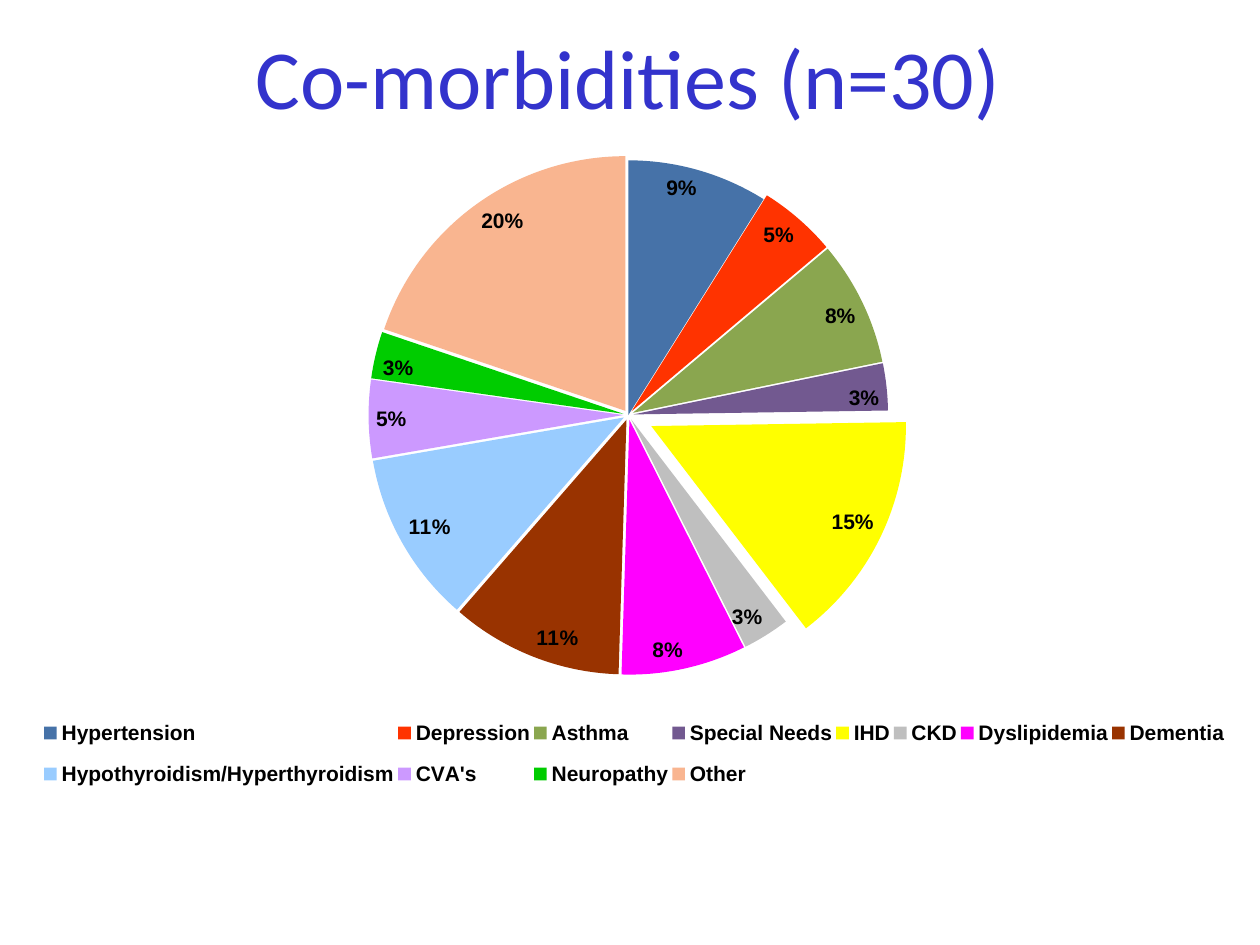
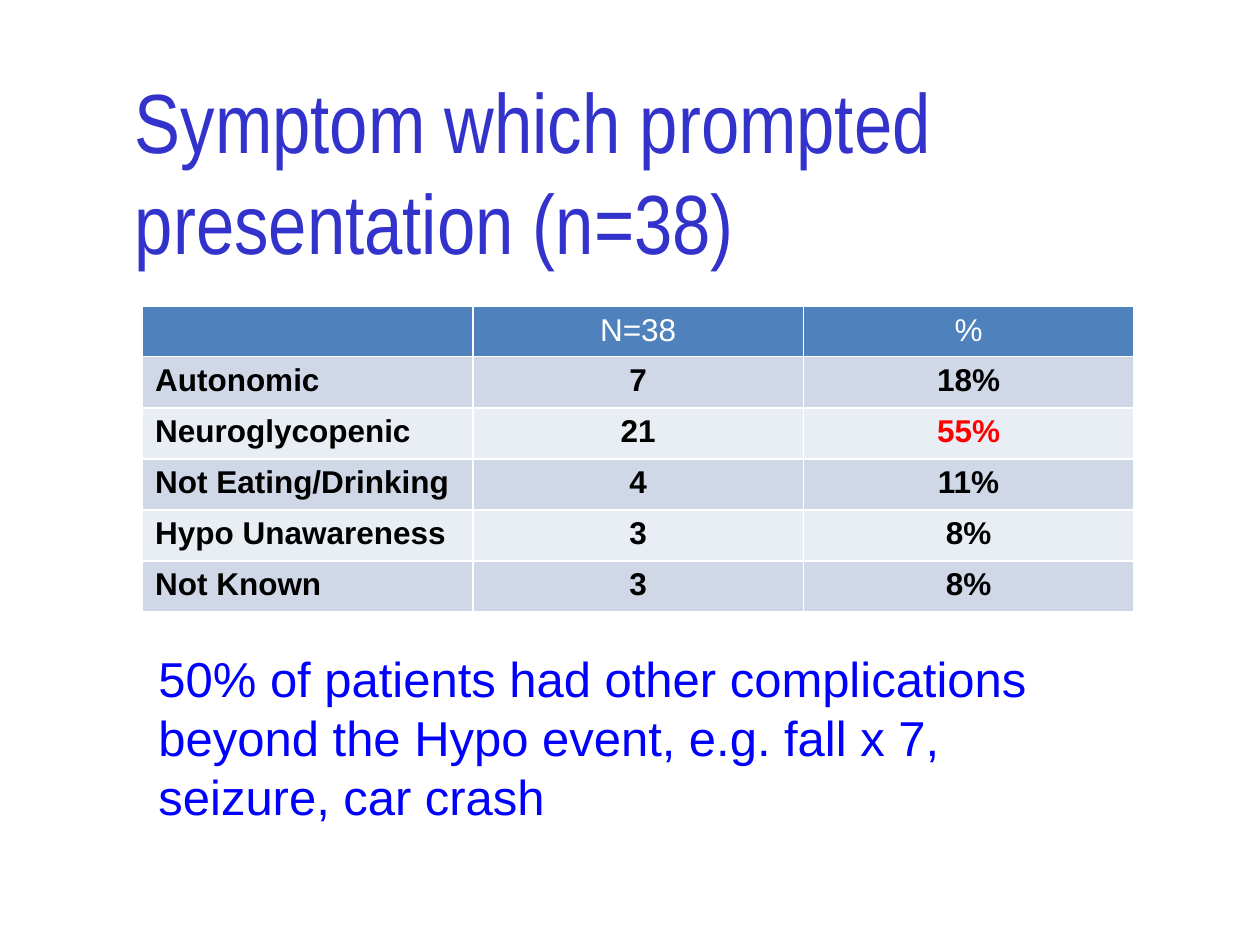
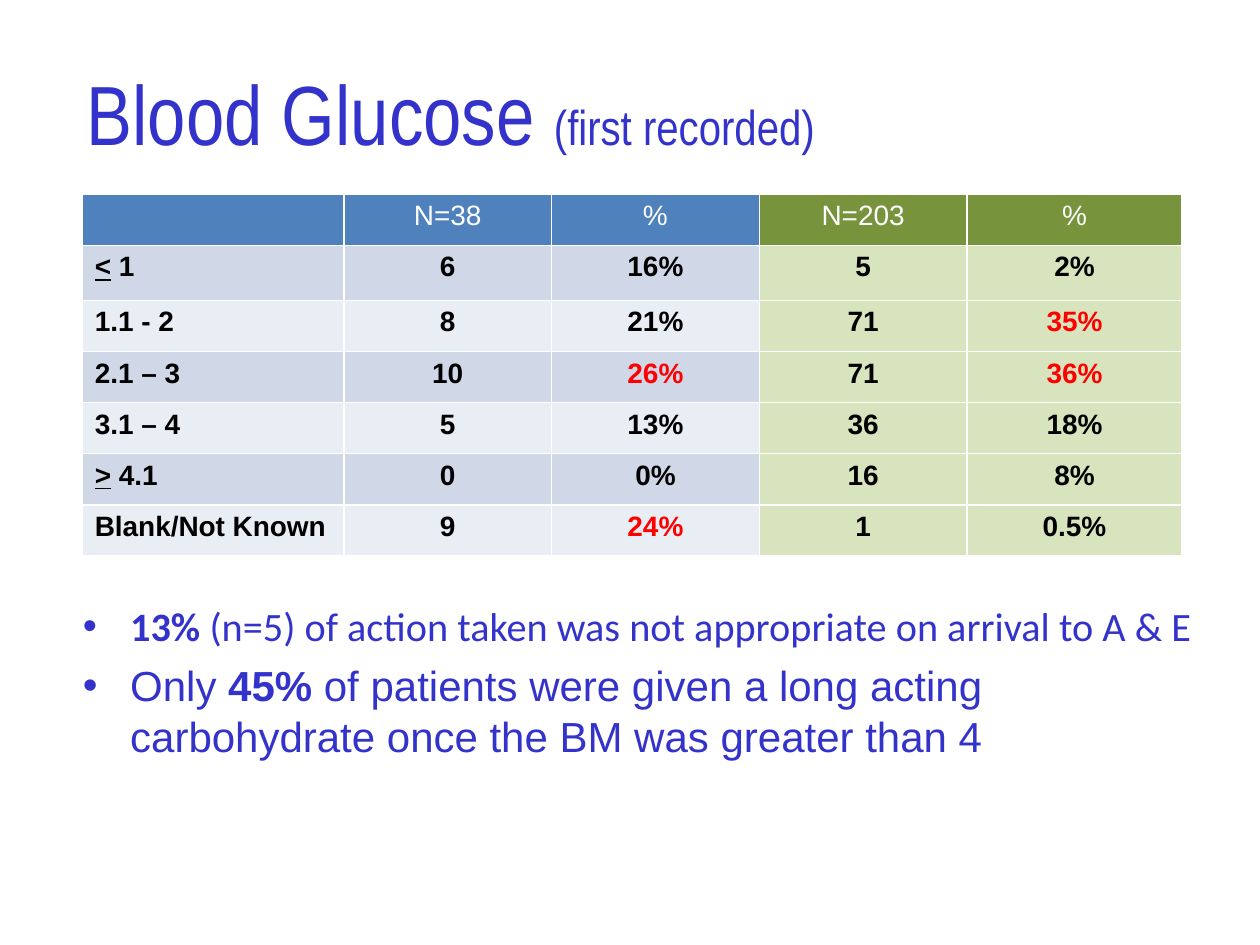
"""Build three slides on co-morbidities, symptoms and blood glucose."""
from dataclasses import dataclass

from pptx import Presentation
from pptx import util as u
from pptx.chart.data import CategoryChartData
from pptx.dml.color import RGBColor
from pptx.enum import chart as charts, text
from pptx.oxml import parse_xml
from pptx.oxml.ns import nsdecls


@dataclass(frozen=True)
class Theme:
    title: str = "3333CC"
    note: str = "0000FF"
    ink: str = "000000"
    white: str = "FFFFFF"
    alert: str = "FF0000"
    blue: str = "4F81BD"
    blue_bands: tuple = ("D0D8E8", "E9EDF4")
    green: str = "77933C"
    green_bands: tuple = ("D7E4BD", "D7E4BD")
    sans: str = "Arial"
    narrow: str = "Arial Narrow"
    soft: str = "Calibri"
    title_size: int = 48
    note_size: int = 28
    label_size: int = 12


THEME = Theme()


@dataclass(frozen=True)
class Area:
    left: float
    top: float
    width: float
    height: float

    def lengths(self) -> list:
        return [u.Pt(side) for side in (self.left, self.top, self.width, self.height)]


@dataclass(frozen=True)
class Span:
    words: str
    size: float
    font: str = THEME.sans
    color: str = THEME.title
    bold: bool = False
    underline: bool = False


@dataclass(frozen=True)
class Slice:
    name: str
    percent: int
    color: str
    explosion: int = 2


@dataclass(frozen=True)
class Grid:
    area: Area
    widths: list
    heights: list
    size: int
    rows: list
    alerts: set
    green_from: int = 99


SLICES = [
    Slice("Hypertension", 9, "4672A8", 0),
    Slice("Depression", 5, "FF3300"),
    Slice("Asthma", 8, "8AA64F"),
    Slice("Special Needs", 3, "725990"),
    Slice("IHD", 15, "FFFF00", 10),
    Slice("CKD", 3, "BFBFBF"),
    Slice("Dyslipidemia", 8, "FF00FF"),
    Slice("Dementia", 11, "993300"),
    Slice("Hypothyroidism/Hyperthyroidism", 11, "99CCFF"),
    Slice("CVA's", 5, "CC99FF"),
    Slice("Neuropathy", 3, "00CC00"),
    Slice("Other", 20, "F9B590"),
]

SYMPTOMS = Grid(
    Area(81.5, 175, 566.4, 175), [188.8] * 3, [28.8] + [29.2] * 5, 18,
    [
        ["", "N=38", "%"],
        ["Autonomic", "7", "18%"],
        ["Neuroglycopenic", "21", "55%"],
        ["Not Eating/Drinking", "4", "11%"],
        ["Hypo Unawareness", "3", "8%"],
        ["Not Known", "3", "8%"],
    ],
    {(2, 2)},
)

GLUCOSE = Grid(
    Area(47, 111, 628.5, 206.5), [149.5, 118.7, 118.7, 118.7, 122.9],
    [29.2, 31.5] + [29.2] * 5, 16,
    [
        ["", "N=38", "%", "N=203", "%"],
        ["< 1", "6", "16%", "5", "2%"],
        ["1.1 - 2", "8", "21%", "71", "35%"],
        ["2.1 – 3", "10", "26%", "71", "36%"],
        ["3.1 – 4", "5", "13%", "36", "18%"],
        ["> 4.1", "0", "0%", "16", "8%"],
        ["Blank/Not Known", "9", "24%", "1", "0.5%"],
    ],
    {(2, 4), (3, 2), (3, 4), (6, 2)},
    green_from=3,
)


def style_font(font, size: float, name: str, color: str, bold: bool = False) -> None:
    """Set the face, size, colour and weight of a font."""
    font.size, font.name, font.bold = u.Pt(size), name, bold
    font.color.rgb = RGBColor.from_string(color)


def write_spans(para, spans: list) -> None:
    """Fill a paragraph with formatted runs."""
    for span in spans:
        run = para.add_run()
        run.text = span.words
        style_font(run.font, span.size, span.font, span.color, span.bold)
        if span.underline:
            run.font.underline = True


def add_text(page, area: Area, paragraphs: list, anchor=text.MSO_ANCHOR.TOP):
    """Add a wrapping text box, one list of spans to a paragraph."""
    frame = page.shapes.add_textbox(*area.lengths()).text_frame
    frame.word_wrap = True
    frame.vertical_anchor = anchor
    for number, spans in enumerate(paragraphs):
        write_spans(frame.add_paragraph() if number else frame.paragraphs[0], spans)
    return frame


def add_title(page, area: Area, words: str, font: str = THEME.narrow,
              suffix: str = "", anchor=text.MSO_ANCHOR.BOTTOM):
    """Add a slide title with an optional smaller suffix."""
    spans = [Span(words, THEME.title_size, font)]
    if suffix:
        spans.append(Span(suffix, THEME.note_size, font))
    return add_text(page, area, [spans], anchor)


def add_bullets(para) -> None:
    """Give a paragraph a hanging round bullet."""
    para.space_after = u.Pt(6)
    props = para._p.get_or_add_pPr()
    props.set("marL", str(u.Pt(27)))
    props.set("indent", str(-u.Pt(27)))
    for tag in ('buFont {} typeface="Arial"', 'buChar {} char="•"'):
        props.append(parse_xml(f"<a:{tag.format(nsdecls('a'))}/>"))


def add_borders(cell) -> None:
    """Draw thin white lines around a cell."""
    props = cell._tc.get_or_add_tcPr()
    for position, side in enumerate("LRTB"):
        props.insert(position, parse_xml(
            f'<a:ln{side} {nsdecls("a")} w="{u.Pt(1)}"><a:solidFill>'
            f'<a:srgbClr val="{THEME.white}"/></a:solidFill></a:ln{side}>'))


def cell_spans(grid: Grid, row: int, column: int) -> list:
    """Return the spans of a cell, underlining a leading comparison sign."""
    words = grid.rows[row][column]
    if row == 0:
        return [Span(words, grid.size, color=THEME.white)] if words else []
    color = THEME.alert if (row, column) in grid.alerts else THEME.ink
    if words[0] in "<>":
        return [Span(words[0], grid.size, color=color, bold=True, underline=True),
                Span(words[1:], grid.size, color=color, bold=True)]
    return [Span(words, grid.size, color=color, bold=True)]


def add_grid(page, grid: Grid) -> None:
    """Add a table with a coloured header and banded rows."""
    table = page.shapes.add_table(
        len(grid.rows), len(grid.widths), *grid.area.lengths()).table
    for column, width in zip(table.columns, grid.widths):
        column.width = u.Pt(width)
    for number, height in enumerate(grid.heights):
        table.rows[number].height = u.Pt(height)
        for column in range(len(grid.widths)):
            cell = table.cell(number, column)
            green = column >= grid.green_from
            header = THEME.green if green else THEME.blue
            bands = THEME.green_bands if green else THEME.blue_bands
            cell.fill.solid()
            cell.fill.fore_color.rgb = RGBColor.from_string(
                bands[(number - 1) % 2] if number else header)
            add_borders(cell)
            para = cell.text_frame.paragraphs[0]
            if column:
                para.alignment = text.PP_ALIGN.CENTER
            write_spans(para, cell_spans(grid, number, column))


def place_part(part, index: int, inner: bool, box: tuple) -> None:
    """Give a chart part a manual layout in fractions of the chart."""
    for layout in part.xpath("./c:layout"):
        part.remove(layout)
    target = '<c:layoutTarget val="inner"/>' if inner else ""
    modes = '<c:xMode val="edge"/><c:yMode val="edge"/>'
    sides = "".join(f'<c:{side} val="{value}"/>' for side, value in zip("xywh", box))
    part.insert(index, parse_xml(
        f'<c:layout {nsdecls("c")}><c:manualLayout>{target}{modes}{sides}'
        "</c:manualLayout></c:layout>"))


def add_pie(page, area: Area, slices: list) -> None:
    """Add a pie chart with pulled-out slices and a legend below."""
    data = CategoryChartData()
    data.categories = [piece.name for piece in slices]
    data.add_series("Series 1", [piece.percent for piece in slices])
    chart = page.shapes.add_chart(
        charts.XL_CHART_TYPE.PIE, *area.lengths(), data).chart
    style_font(chart.font, 10, THEME.soft, THEME.ink)
    chart.has_title = False
    chart.has_legend = True
    chart.legend.position = charts.XL_LEGEND_POSITION.BOTTOM
    chart.legend.include_in_layout = False
    style_font(chart.legend.font, THEME.label_size, THEME.sans, THEME.ink, True)

    plot = chart.plots[0]
    plot.vary_by_categories = True
    plot.has_data_labels = True
    labels = plot.data_labels
    labels.show_percentage, labels.show_value = True, False
    labels.number_format, labels.number_format_is_linked = "0%", False
    labels.position = charts.XL_LABEL_POSITION.INSIDE_END
    style_font(labels.font, THEME.label_size, THEME.sans, THEME.ink, True)

    for number, piece in enumerate(slices):
        fill = plot.series[0].points[number].format.fill
        fill.solid()
        fill.fore_color.rgb = RGBColor.from_string(piece.color)
    for point, piece in zip(chart.element.xpath("//c:dPt"), slices):
        point.xpath("./c:spPr")[0].addprevious(parse_xml(
            f'<c:explosion {nsdecls("c")} val="{piece.explosion}"/>'))
    place_part(chart.element.xpath("//c:plotArea")[0], 0, True, (0.27, 0.02, 0.45, 0.76))
    place_part(chart.element.xpath("//c:legend")[0], 1, False, (0, 0.83, 1, 0.15))


def build_comorbidities(page) -> None:
    """Build the co-morbidity pie slide."""
    frame = add_title(page, Area(70, -1.5, 578, 90), "Co-morbidities (n=30)",
                      THEME.soft, anchor=text.MSO_ANCHOR.MIDDLE)
    frame.paragraphs[0].alignment = text.PP_ALIGN.CENTER
    add_pie(page, Area(23, 84, 679, 383), SLICES)


def build_symptoms(page) -> None:
    """Build the presenting symptom slide."""
    add_title(page, Area(70, 68.5, 578, 90), "Symptom which prompted presentation (n=38)")
    add_grid(page, SYMPTOMS)
    note = ("50% of patients had other complications beyond the Hypo event, "
            "e.g. fall x 7, seizure, car crash")
    add_text(page, Area(83.5, 367, 564.5, 109),
             [[Span(note, THEME.note_size, color=THEME.note)]])


def build_glucose(page) -> None:
    """Build the blood glucose slide."""
    add_title(page, Area(42.5, 29, 578, 67.5), "Blood Glucose ", suffix="(first recorded)")
    add_grid(page, GLUCOSE)
    frame = add_text(page, Area(40.3, 340, 654, 161), [
        [Span("13% ", 23, THEME.soft, bold=True),
         Span("(n=5) of action taken was not appropriate on arrival to A & E",
              23, THEME.soft)],
        [Span("Only", 24), Span(" 45% ", 24, bold=True),
         Span("of patients were given a long acting carbohydrate once the BM "
              "was greater than 4", 24)],
    ])
    for para in frame.paragraphs:
        add_bullets(para)


def main() -> None:
    """Build and save the deck."""
    deck = Presentation()
    deck.slide_width, deck.slide_height = u.Pt(720), u.Pt(540)
    for build in (build_comorbidities, build_symptoms, build_glucose):
        build(deck.slides.add_slide(deck.slide_layouts[6]))
    deck.save("out.pptx")


if __name__ == "__main__":
    main()
